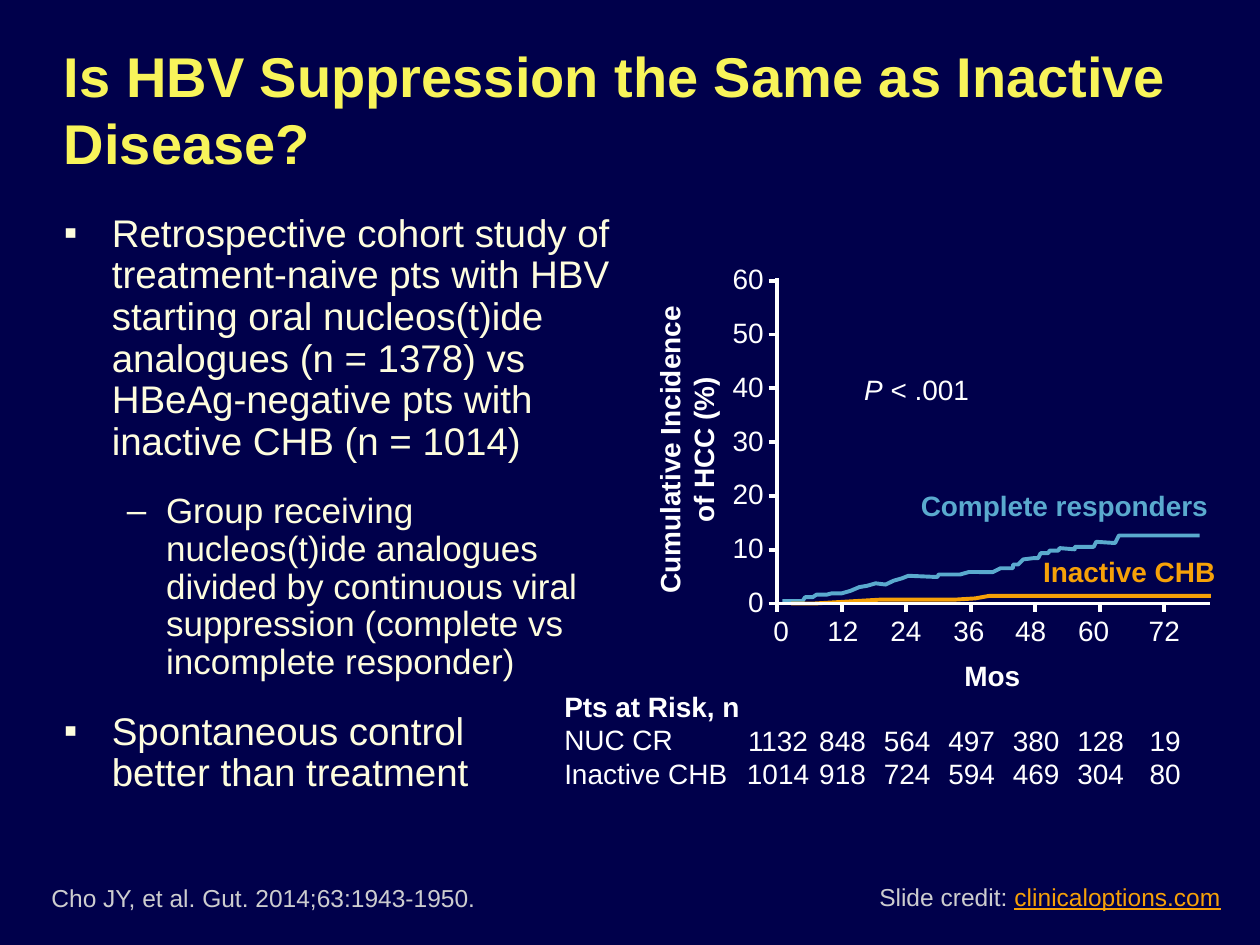
"""Build a slide comparing HCC incidence under HBV suppression and inactive disease."""
from lxml import etree
from pptx import Presentation
from pptx.dml.color import RGBColor
from pptx.enum.shapes import MSO_CONNECTOR
from pptx.enum.text import MSO_ANCHOR, MSO_AUTO_SIZE, PP_ALIGN
from pptx.oxml.ns import qn
from pptx.util import Inches, Pt

LEFT, CENTER, RIGHT = PP_ALIGN.LEFT, PP_ALIGN.CENTER, PP_ALIGN.RIGHT
TOP, MIDDLE, BOTTOM = MSO_ANCHOR.TOP, MSO_ANCHOR.MIDDLE, MSO_ANCHOR.BOTTOM
GROW = MSO_AUTO_SIZE.SHAPE_TO_FIT_TEXT
STRAIGHT = MSO_CONNECTOR.STRAIGHT

NAVY = RGBColor(0x00, 0x00, 0x4B)
YELLOW = RGBColor(0xF8, 0xF4, 0x5A)
CREAM = RGBColor(0xFE, 0xFD, 0xDE)
WHITE = RGBColor(0xFF, 0xFF, 0xFF)
GRAY = RGBColor(0xCD, 0xCD, 0xCF)
BLUE = RGBColor(0x5A, 0xAA, 0xCE)
ORANGE = RGBColor(0xF6, 0xA1, 0x08)

UNIT = Inches(0.1)
COLUMNS, ROWS = 100, 75
AXIS_X, AXIS_Y = 61.7, 47.9
TICK_COLUMN, TICK_ROW, TICK = 5.12, 4.27, 0.7
LINE_WIDTH = Pt(2.25)

presentation = Presentation()
presentation.slide_width = COLUMNS * UNIT
presentation.slide_height = ROWS * UNIT
slide = presentation.slides.add_slide(presentation.slide_layouts[6])
slide.background.fill.solid()
slide.background.fill.fore_color.rgb = NAVY


def style_text(paragraph, size, color, bold=False):
    for run in paragraph.runs:
        run.font.name = "Arial"
        run.font.size = Pt(size)
        run.font.color.rgb = color
        run.font.bold = bold
    for line_break in paragraph._p.findall(qn("a:br")):
        etree.SubElement(line_break, qn("a:rPr")).set("sz", str(size * 100))


def add_text(text, box, color=WHITE, size=16, bold=False, align=LEFT,
             wrap=True, anchor=TOP, fit=GROW):
    shape = slide.shapes.add_textbox(*[int(value * UNIT) for value in box])
    text_frame = shape.text_frame
    text_frame.word_wrap = wrap
    text_frame.auto_size = fit
    text_frame.vertical_anchor = anchor
    paragraph = text_frame.paragraphs[0]
    paragraph.text = text
    paragraph.alignment = align
    style_text(paragraph, size, color, bold)
    return shape


add_text("Cho JY, et al. Gut. 2014;63:1943-1950.", (3.1, 69.5, 64.4, 3.4),
         GRAY, 14, anchor=BOTTOM)
add_text("Is HBV Suppression the Same as Inactive Disease?", (4.1, 2.6, 92.3, 12.1),
         YELLOW, 32, True, anchor=MIDDLE, fit=MSO_AUTO_SIZE.NONE)

bullets = [
    ("Retrospective cohort study of treatment-naive pts with HBV starting oral "
     "nucleos(t)ide analogues (n = 1378) vs HBeAg-negative pts with inactive CHB "
     "(n = 1014)", 0),
    ("Group receiving nucleos(t)ide analogues divided by continuous viral "
     "suppression (complete vs incomplete responder)", 1),
    ("Spontaneous control \vbetter than treatment", 0),
]
levels = [("▪", 22, 3.8, 3.8), ("–", 20, 8.1, 3.1)]
body = add_text("", (4.1, 16.5, 45.4, 51.2), fit=MSO_AUTO_SIZE.NONE).text_frame
for index, (text, level) in enumerate(bullets):
    mark, size, margin, hanging = levels[level]
    paragraph = body.add_paragraph() if index else body.paragraphs[0]
    paragraph.text = text
    paragraph.level = level
    paragraph.line_spacing = 0.9
    paragraph.space_before = Pt(10 if index else 0)
    paragraph.space_after = Pt(7)
    properties = paragraph._p.get_or_add_pPr()
    properties.set("marL", str(int(margin * UNIT)))
    properties.set("indent", str(int(-hanging * UNIT)))
    bullet_color = etree.SubElement(properties, qn("a:buClr"))
    etree.SubElement(bullet_color, qn("a:srgbClr")).set("val", str(CREAM))
    etree.SubElement(properties, qn("a:buFont")).set("typeface", "Arial")
    etree.SubElement(properties, qn("a:buChar")).set("char", mark)
    style_text(paragraph, size, CREAM)

add_text("Complete responders", (72.1, 38.3, 25.1, 3.7), BLUE, bold=True, wrap=False)
add_text("Inactive CHB", (81.8, 43.5, 15.9, 3.7), ORANGE, bold=True, wrap=False)
p_value = add_text("P", (67.6, 29.1, 10.5, 3.7), wrap=False).text_frame.paragraphs[0]
p_value.add_run().text = " < .001"
style_text(p_value, 16, WHITE)
p_value.runs[0].font.italic = True
axis_title = add_text("Cumulative Incidence of HCC (%)", (41.2, 32.5, 26.6, 6.4),
                      bold=True, align=CENTER)
axis_title.rotation = 270
add_text("Mos", (61.5, 51.8, 34.5, 3.7), bold=True, align=CENTER)

lines = [(AXIS_X, AXIS_Y, AXIS_X, 22.1), (AXIS_X, AXIS_Y, 96, AXIS_Y)]
for index in range(7):
    label = str(index * 10)
    tick_y = AXIS_Y - index * TICK_ROW
    width = 2.1 + 1.2 * len(label)
    lines.append((AXIS_X - TICK, tick_y, AXIS_X, tick_y))
    add_text(label, (61.6 - width, tick_y - 2, width, 3.7), align=RIGHT, wrap=False)

month_centers = [62, 66.9, 71.9, 76.9, 81.8, 86.8, 92.4]
patients_at_risk = [(1132, 1014), (848, 918), (564, 724), (497, 594),
                    (380, 469), (128, 304), (19, 80)]
for index, (center, counts) in enumerate(zip(month_centers, patients_at_risk)):
    label = str(index * 12)
    tick_x = AXIS_X + index * TICK_COLUMN
    width = 2.1 + 1.2 * len(label)
    lines.append((tick_x, AXIS_Y, tick_x, AXIS_Y + TICK))
    add_text(label, (center - width / 2, 48.2, width, 3.7), align=CENTER, wrap=False)
    add_text("\v".join(map(str, counts)), (tick_x - 4.2, 56.9, 8.5, 6.4), align=CENTER)

risk_labels = add_text("Pts at Risk, n\vNUC CR\vInactive CHB", (43.8, 54.2, 17.9, 9.1))
risk_labels.text_frame.paragraphs[0].runs[0].font.bold = True

responders_early = [
    (62.1, 47.7), (63.7, 47.7), (63.9, 47.4), (64.5, 47.4), (64.8, 47.2), (65.6, 47.2),
    (66, 47.1), (66.8, 47.1), (67.5, 46.9), (68.2, 46.6), (68.8, 46.5), (69.5, 46.3),
    (70.3, 46.4), (70.9, 46.1), (71.6, 45.9), (72.1, 45.7), (74.4, 45.8), (74.5, 45.6),
    (76.2, 45.6), (76.9, 45.4), (77.9, 45.4)]
responders_late = [
    (95.2, 42.5), (88.8, 42.5), (88.5, 43.1), (87, 43), (86.8, 43.4), (85.3, 43.4),
    (85.3, 43.6), (84.1, 43.5), (84, 43.7), (83.3, 43.7), (83.2, 43.9), (82.6, 43.9),
    (82.4, 44.3), (82, 44.3), (81.2, 44.4), (80.8, 44.8), (80.4, 44.8), (80.4, 45.1),
    (79.4, 45.1), (78.8, 45.4), (77.7, 45.4)]
inactive = [
    (96.1, 47.3), (79, 47.3), (78.5, 47.3), (77.4, 47.5), (75.7, 47.6), (74.2, 47.6),
    (69.8, 47.6), (64.7, 47.9), (62.8, 47.9)]
for points, color in [(responders_early, BLUE), (responders_late, BLUE), (inactive, ORANGE)]:
    vertices = [(round(x * 10), round(y * 10)) for x, y in points]
    builder = slide.shapes.build_freeform(*vertices[0], scale=UNIT / 10)
    builder.add_line_segments(vertices[1:], close=False)
    curve = builder.convert_to_shape()
    curve.shadow.inherit = False
    curve.fill.background()
    curve.line.color.rgb = color
    curve.line.width = LINE_WIDTH

for line in lines:
    connector = slide.shapes.add_connector(STRAIGHT, *[int(value * UNIT) for value in line])
    connector.line.color.rgb = WHITE
    connector.line.width = LINE_WIDTH
    etree.SubElement(connector._element.spPr, qn("a:effectLst"))

credit = add_text("Slide credit: ", (68.8, 69.5, 29.2, 3.4), GRAY, 14, wrap=False)
credit_paragraph = credit.text_frame.paragraphs[0]
credit_paragraph.add_run().text = "clinicaloptions.com"
style_text(credit_paragraph, 14, GRAY)
address_font = credit_paragraph.runs[1].font
address_font.color.rgb = ORANGE
address_font.underline = True

presentation.save("out.pptx")
